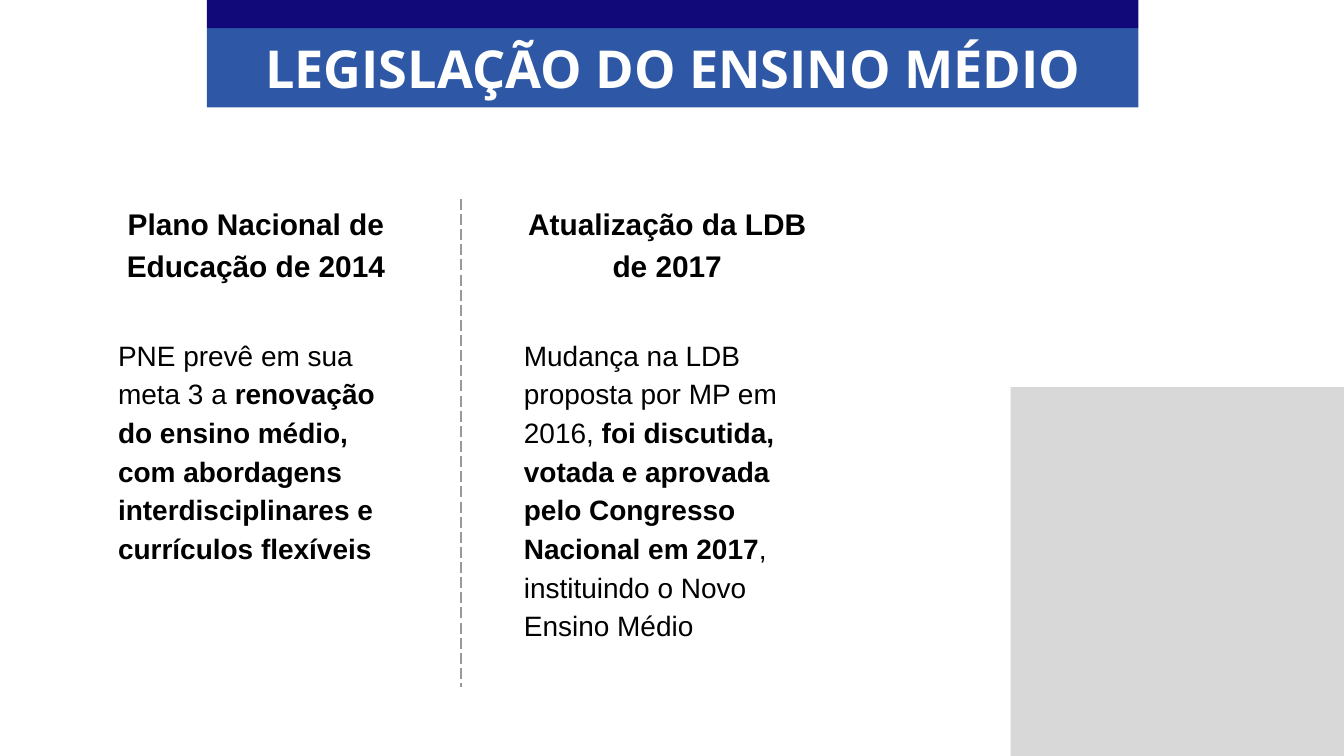
from lxml.etree import SubElement
from pptx import Presentation
from pptx.dml.color import RGBColor
from pptx.enum.dml import MSO_LINE
from pptx.enum.shapes import MSO_CONNECTOR, MSO_SHAPE
from pptx.enum.text import MSO_ANCHOR, MSO_AUTO_SIZE, PP_ALIGN
from pptx.oxml.ns import qn
from pptx.util import Inches, Pt

NAVY = RGBColor(0x11, 0x09, 0x79)
BLUE = RGBColor(0x2E, 0x58, 0xA6)
WHITE = RGBColor(0xFF, 0xFF, 0xFF)
BLACK = RGBColor(0x00, 0x00, 0x00)
GRAY = RGBColor(0x99, 0x99, 0x99)
SILVER = RGBColor(0xBF, 0xBF, 0xBF)

SLIDE_W = 10
SLIDE_H = SLIDE_W * 9 / 16
COLUMN_TOP, COLUMN_W = 1.48, 2.33
COLUMNS = [
    (0.74, 0.04, 2.39, 1.91, "Plano Nacional de Educação de 2014", [
        ("PNE prevê em sua meta 3 a ", False),
        ("renovação do ensino médio, com abordagens interdisciplinares "
         "e currículos flexíveis", True),
    ]),
    (3.8, 0, 2.33, 2.49, "Atualização da LDB de 2017", [
        ("Mudança na LDB proposta por MP em 2016, ", False),
        ("foi discutida, votada e aprovada pelo Congresso Nacional em 2017", True),
        (", instituindo o Novo Ensino Médio", False),
    ]),
]


def add_rect(slide, left, top, width, height, color):
    """Add a plain filled rectangle without line or shadow."""
    sp = slide.shapes.add_shape(
        MSO_SHAPE.RECTANGLE, Inches(left), Inches(top), Inches(width), Inches(height))
    sp.shadow.inherit = False
    sp.fill.solid()
    sp.fill.fore_color.rgb = color
    sp.line.fill.background()
    return sp


def format_frame(tf, anchor):
    """Set wrapping, equal insets and the anchor of a text frame."""
    tf.word_wrap = True
    tf.vertical_anchor = anchor
    tf.margin_left = tf.margin_right = Inches(0.1)
    tf.margin_top = tf.margin_bottom = Inches(0.1)


def format_font(font, name, size, color):
    """Set the typeface, size and colour of a font."""
    font.name = name
    font.size = Pt(size)
    font.color.rgb = color


def add_header(slide, left, top, width, height):
    """Place the navy strip and the title band below it."""
    strip_h = 0.21
    add_rect(slide, left, top, width, strip_h, NAVY)
    title = slide.shapes.title
    title.left, title.top = Inches(left), Inches(top + strip_h)
    title.width, title.height = Inches(width), Inches(height - strip_h)
    title.fill.solid()
    title.fill.fore_color.rgb = BLUE
    tf = title.text_frame
    tf.text = "LEGISLAÇÃO DO ENSINO MÉDIO"
    format_frame(tf, MSO_ANCHOR.MIDDLE)
    tf.margin_top = tf.margin_bottom = Inches(0.05)
    tf.auto_size = MSO_AUTO_SIZE.NONE
    p = tf.paragraphs[0]
    p.alignment = PP_ALIGN.CENTER
    format_font(p.font, "Open Sans", 28, WHITE)
    p.font.bold = True


def add_column(slide, left, top, width, indent, body_w, body_h, heading, runs):
    """Place a centred heading with its explanation underneath."""
    sp = add_rect(slide, left, top, width, 0.64, WHITE)
    sp.line.color.rgb = WHITE
    sp.line.width = Pt(0.75)
    tf = sp.text_frame
    format_frame(tf, MSO_ANCHOR.MIDDLE)
    p = tf.paragraphs[0]
    p.text = heading
    p.alignment = PP_ALIGN.CENTER
    p.line_spacing = 1.15
    format_font(p.font, "Arial", 16, BLACK)
    p.font.bold = True

    body = slide.shapes.add_textbox(
        Inches(left + indent), Inches(top + 0.9), Inches(body_w), Inches(body_h))
    tf = body.text_frame
    format_frame(tf, MSO_ANCHOR.TOP)
    tf.auto_size = MSO_AUTO_SIZE.SHAPE_TO_FIT_TEXT
    p = tf.paragraphs[0]
    p.line_spacing = 1.15
    p.space_after = Pt(10)
    format_font(p.font, "Arial", 15, BLACK)
    for text, bold in runs:
        r = p.add_run()
        r.text = text
        r.font.bold = bold


def add_divider(slide, left, top, height):
    """Draw the dashed vertical line between the columns."""
    line = slide.shapes.add_connector(
        MSO_CONNECTOR.STRAIGHT, Inches(left), Inches(top), Inches(left), Inches(top + height))
    line.line.color.rgb = GRAY
    line.line.width = Pt(0.75)
    line.line.dash_style = MSO_LINE.LONG_DASH
    SubElement(line._element.spPr, qn("a:effectLst"))


def add_corner_panel(slide, left, top, width, height):
    """Place the translucent panel in the lower right corner."""
    sp = add_rect(slide, left, top, width, height, SILVER)
    color = sp._element.spPr.find(qn("a:solidFill")).find(qn("a:srgbClr"))
    SubElement(color, qn("a:alpha")).set("val", "60000")


def main():
    """Build the slide and save it."""
    prs = Presentation()
    prs.slide_width, prs.slide_height = Inches(SLIDE_W), Inches(SLIDE_H)
    slide = prs.slides.add_slide(prs.slide_layouts[5])
    add_header(slide, 1.54, 0, 6.93, 0.8)
    for left, *content in COLUMNS:
        add_column(slide, left, COLUMN_TOP, COLUMN_W, *content)
    add_divider(slide, 3.43, COLUMN_TOP, 3.63)
    add_corner_panel(slide, 7.52, 2.88, 2.48, 2.81)
    prs.save("out.pptx")


if __name__ == "__main__":
    main()
